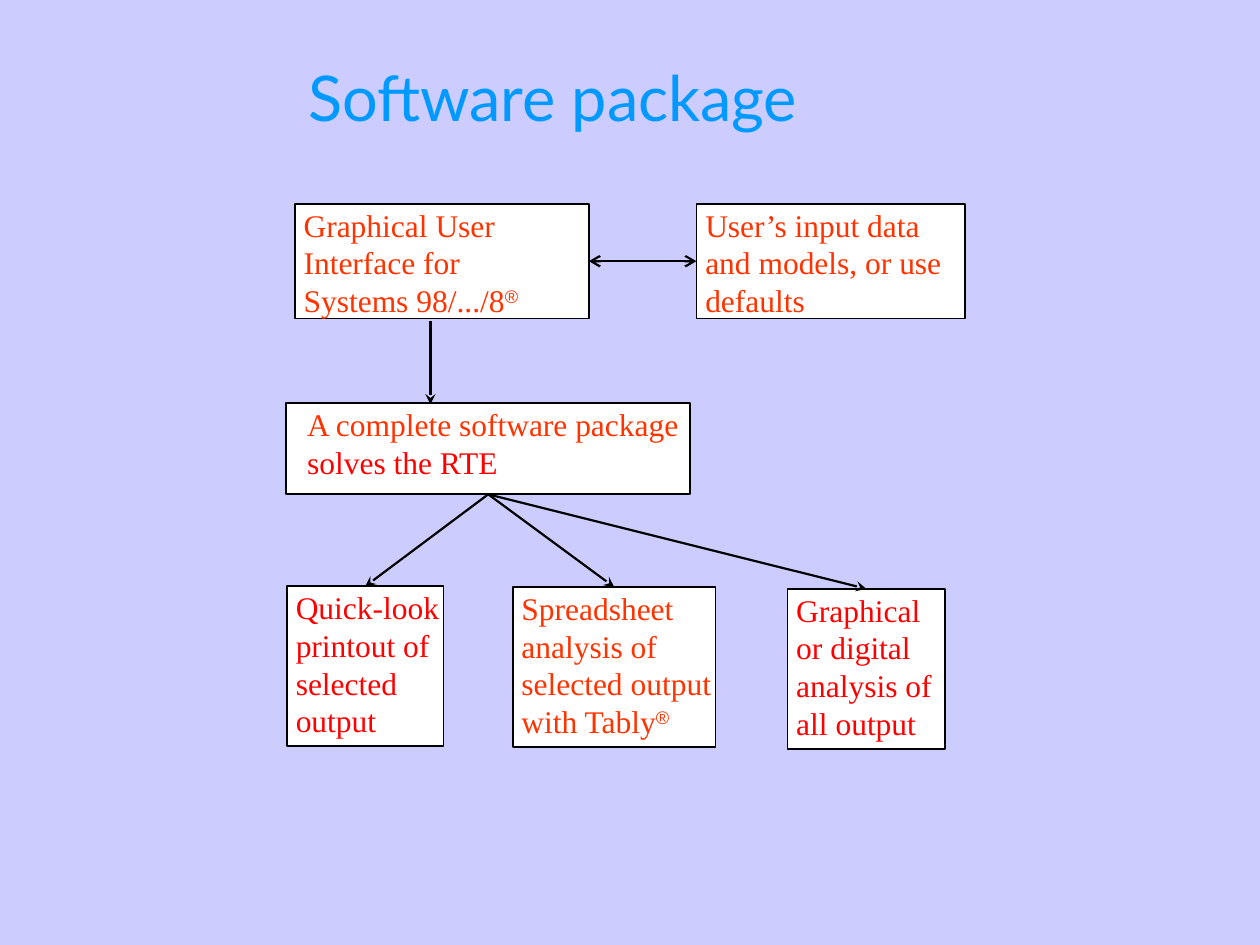
from dataclasses import dataclass

from lxml import etree
from pptx import Presentation
from pptx import util as u
from pptx.dml.color import RGBColor
from pptx.enum import shapes, text
from pptx.oxml.ns import qn


@dataclass(frozen=True)
class Theme:
    background: RGBColor = RGBColor(0xCC, 0xCC, 0xFF)
    title: RGBColor = RGBColor(0x00, 0x99, 0xFF)
    orange: RGBColor = RGBColor(0xFF, 0x33, 0x00)
    red: RGBColor = RGBColor(0xFF, 0x00, 0x00)
    fill: RGBColor = RGBColor(0xFF, 0xFF, 0xFF)
    line: RGBColor = RGBColor(0x00, 0x00, 0x00)
    title_font: str = "Lato"
    body_font: str = "Times New Roman"
    mark_font: str = "Arial"
    title_size: int = 36
    body_size: int = 18
    outline: float = 1
    arrow: float = 1.25


THEME = Theme()
TOP, LEFT, BOTTOM, RIGHT = range(4)  # connection sites of a rectangle
MARK = "®"


def style(font, name, size, color):
    font.name, font.size = name, u.Pt(size)
    font.color.rgb = color


def add_title(page, words):
    box = page.shapes.add_textbox(u.Pt(169), u.Pt(30), u.Pt(383), u.Pt(50))
    box.text_frame.word_wrap = True
    para = box.text_frame.paragraphs[0]
    para.text = words
    style(para.font, THEME.title_font, THEME.title_size, THEME.title)


def add_line_of_text(para, words, color):
    """Write one line, raising a trailing registered mark."""
    style(para.font, THEME.body_font, THEME.body_size, color)
    para.alignment = text.PP_ALIGN.LEFT
    para.add_run().text = words.removesuffix(MARK)
    if words.endswith(MARK):
        span = para.add_run()
        span.text = MARK
        span.font.name = THEME.mark_font
        span.font._element.set("baseline", "30000")


def add_box(page, left, top, width, height, lines, indent=5):
    """Draw a bordered box; lines holds (words, color) pairs."""
    box = page.shapes.add_shape(shapes.MSO_SHAPE.RECTANGLE, u.Pt(left),
                                u.Pt(top), u.Pt(width), u.Pt(height))
    box.shadow.inherit = False
    box.fill.solid()
    box.fill.fore_color.rgb = THEME.fill
    box.line.color.rgb = THEME.line
    box.line.width = u.Pt(THEME.outline)
    frame = box.text_frame
    frame.word_wrap = True
    frame.vertical_anchor = text.MSO_ANCHOR.TOP
    frame.margin_left, frame.margin_top = u.Pt(indent), u.Pt(1)
    frame.margin_right = frame.margin_bottom = 0
    for index, (words, color) in enumerate(lines):
        para = frame.add_paragraph() if index else frame.paragraphs[0]
        add_line_of_text(para, words, color)
    return box


def add_arrow(page, start=(0, 0), end=(0, 0), head=None, tail="stealth"):
    arrow = page.shapes.add_connector(shapes.MSO_CONNECTOR.STRAIGHT,
                                      *map(u.Pt, start + end))
    arrow.line.color.rgb = THEME.line
    arrow.line.width = u.Pt(THEME.arrow)
    outline = arrow.line._get_or_add_ln()
    for tag, kind in (("a:headEnd", head), ("a:tailEnd", tail)):
        if kind:
            etree.SubElement(outline, qn(tag), type=kind)
    etree.SubElement(arrow._element.spPr, qn("a:effectLst"))
    return arrow


def join(page, source, source_side, target, target_side, **ends):
    arrow = add_arrow(page, **ends)
    arrow.begin_connect(source, source_side)
    arrow.end_connect(target, target_side)


def colored(color, *lines):
    return [(words, color) for words in lines]


def main():
    deck = Presentation()
    deck.slide_width, deck.slide_height = u.Pt(720), u.Pt(540)
    page = deck.slides.add_slide(deck.slide_layouts[6])
    page.background.fill.solid()
    page.background.fill.fore_color.rgb = THEME.background

    add_title(page, "Software package")

    # Inputs
    interface = add_box(page, 168.5, 116.5, 168, 65.5, colored(
        THEME.orange, "Graphical User", "Interface for", "Systems 98/.../8®"))
    user_data = add_box(page, 398, 116.5, 153.5, 65.5, colored(
        THEME.orange, "User’s input data", "and models, or use", "defaults"))

    # Solver
    solver = add_box(page, 163.5, 230.5, 231, 52,
                     colored(THEME.orange, "A complete software package")
                     + colored(THEME.red, "solves the RTE"), indent=12)

    # Outputs
    outputs = [
        add_box(page, 164, 335, 89.5, 91.5, colored(
            THEME.red, "Quick-look", "printout of", "selected", "output")),
        add_box(page, 293, 335.5, 116, 91.5, colored(
            THEME.orange, "Spreadsheet", "analysis of", "selected output",
            "with Tably®")),
        add_box(page, 450, 336.5, 90, 91.5, colored(
            THEME.red, "Graphical", "or digital", "analysis of",
            "all output")),
    ]

    # Flow
    join(page, interface, RIGHT, user_data, LEFT, head="arrow", tail="arrow")
    add_arrow(page, (246, 183.5), (246, 231))
    for output in outputs:
        join(page, solver, BOTTOM, output, TOP)

    deck.save("out.pptx")


if __name__ == "__main__":
    main()
